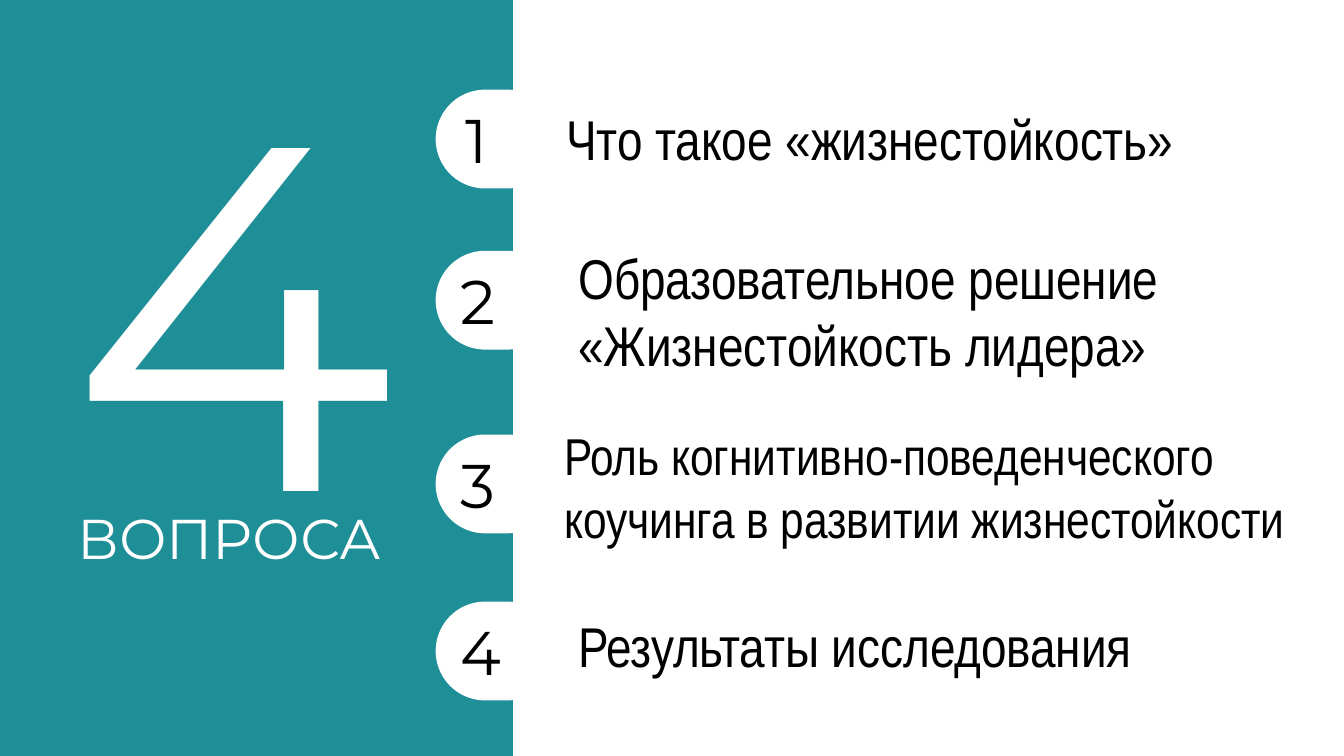
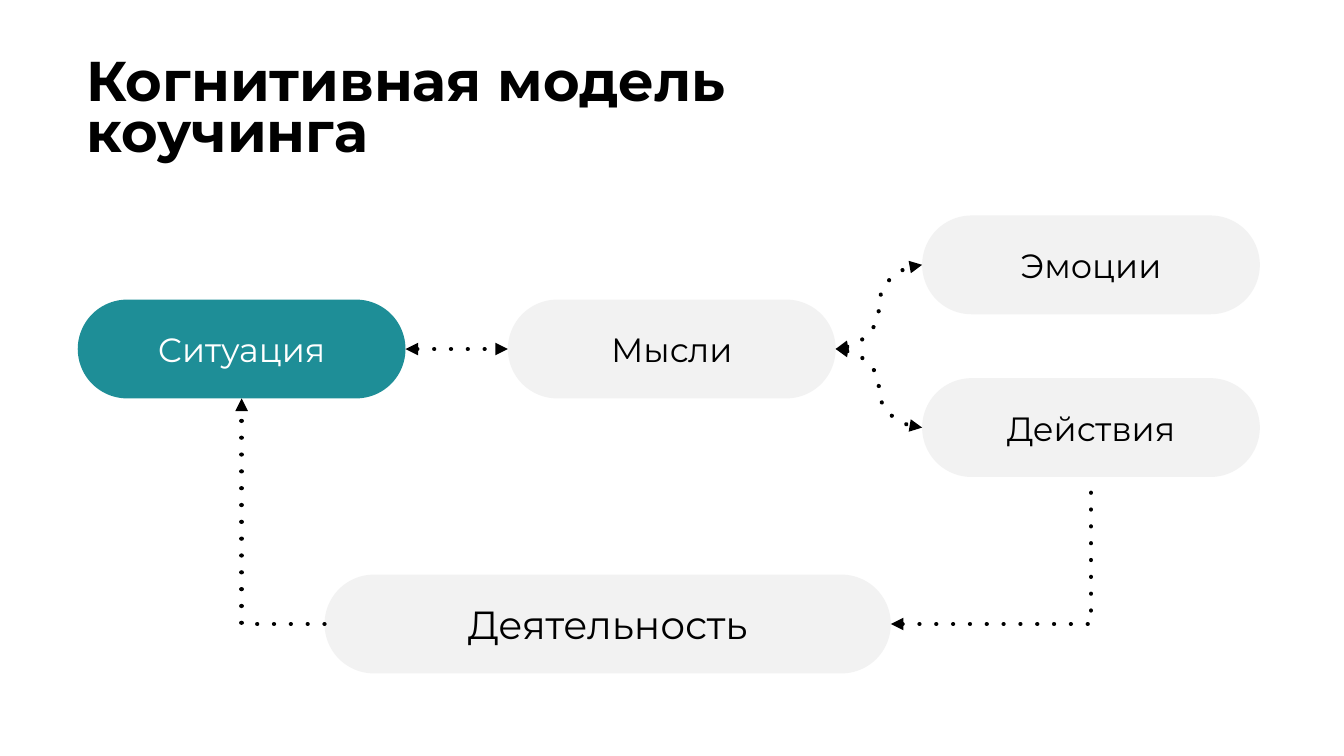
"""Build a two-slide deck: four questions and the cognitive coaching model."""
import dataclasses

import lxml.etree
import pptx
import pptx.dml.color
import pptx.enum.shapes
import pptx.enum.text
import pptx.oxml.ns
import pptx.util

Cm = pptx.util.Cm
Pt = pptx.util.Pt
SHAPES = pptx.enum.shapes.MSO_SHAPE
LINKS = pptx.enum.shapes.MSO_CONNECTOR
ANCHOR = pptx.enum.text.MSO_ANCHOR
ALIGN = pptx.enum.text.PP_ALIGN
TOP, LEFT, BOTTOM, RIGHT = range(4)


@dataclasses.dataclass(frozen=True)
class Theme:
    teal: str = "1E8E97"
    grey: str = "F2F2F2"
    white: str = "FFFFFF"
    black: str = "000000"
    font: str = "Montserrat"
    narrow: str = "Arial Narrow"
    huge: int = 350
    number: int = 44
    title: int = 40
    compact: int = 37
    large: int = 28
    label: int = 24
    pill_height: float = 2.49


THEME = Theme()


def colour(code):
    return pptx.dml.color.RGBColor.from_string(code)


def write(shape, text, *, size, color=THEME.black, font=THEME.font, bold=False,
          align=ALIGN.LEFT, anchor=ANCHOR.MIDDLE, spacing=None, right=0.25):
    frame = shape.text_frame
    frame.word_wrap = True
    frame.vertical_anchor = anchor
    frame.margin_left, frame.margin_right = Cm(0.25), Cm(right)
    frame.margin_top = frame.margin_bottom = Cm(0.13)
    para = frame.paragraphs[0]
    para.alignment = align
    if spacing:
        para.line_spacing = spacing
    span = para.add_run()
    span.text = text
    span.font.name = font
    span.font.size = Pt(size)
    span.font.bold = bold
    span.font.color.rgb = colour(color)


class Painter:
    def __init__(self, deck, theme):
        self.deck = deck
        self.theme = theme
        self.page = None

    def new_page(self):
        self.page = self.deck.slides.add_slide(self.deck.slide_layouts[6])

    def block(self, kind, left, top, width, height, fill):
        shape = self.page.shapes.add_shape(kind, Cm(left), Cm(top), Cm(width), Cm(height))
        shape.shadow.inherit = False
        shape.fill.solid()
        shape.fill.fore_color.rgb = colour(fill)
        shape.line.fill.background()
        return shape

    def text(self, text, left, top, width, height, **style):
        box = self.page.shapes.add_textbox(Cm(left), Cm(top), Cm(width), Cm(height))
        write(box, text, **style)

    def pill(self, text, left, top, width, fill, **style):
        shape = self.block(SHAPES.ROUNDED_RECTANGLE, left, top, width,
                           self.theme.pill_height, fill)
        shape.adjustments[0] = 0.5
        write(shape, text, align=ALIGN.CENTER, **style)
        return shape

    def link(self, kind, start, start_side, end, end_side, arrows, preset=None):
        link = self.page.shapes.add_connector(kind, 0, 0, 0, 0)
        link.begin_connect(start, start_side)
        link.end_connect(end, end_side)
        link.line.color.rgb = colour(self.theme.black)
        link.line.width = Pt(3)
        qn = pptx.oxml.ns.qn
        properties = link.element.spPr
        if preset:
            properties.find(qn("a:prstGeom")).set("prst", preset)
        outline = properties.find(qn("a:ln"))
        outline.set("cap", "rnd")
        lxml.etree.SubElement(outline, qn("a:prstDash"), val="dot")
        lxml.etree.SubElement(outline, qn("a:round"))
        for arrow in arrows:
            lxml.etree.SubElement(outline, qn(f"a:{arrow}"), type="triangle")
        lxml.etree.SubElement(properties, qn("a:effectLst"))


def questions_page(painter):
    theme = painter.theme
    painter.new_page()
    painter.block(SHAPES.RECTANGLE, 0, 0, 12.93, 19.05, theme.teal)
    painter.text("4", 1.52, -0.08, 8.84, 15.21, size=theme.huge,
                 color=theme.white, anchor=ANCHOR.TOP)
    painter.text("ВОПРОСА", 1.7, 12.57, 8.43, 1.96, size=theme.title,
                 color=theme.white, anchor=ANCHOR.TOP)
    questions = [
        ("Что такое «жизнестойкость»", 2.26, 14.02, 2.51, 18.95, 1.96, theme.title),
        ("Образовательное решение «Жизнестойкость лидера»",
         6.32, 14.33, 5.99, 18.95, 3.68, theme.title),
        ("Роль когнитивно-поведенческого коучинга в развитии жизнестойкости",
         10.95, 13.97, 10.54, 19.63, 3.43, theme.compact),
        ("Результаты исследования", 15.16, 14.33, 15.27, 18.95, 1.96, theme.title),
    ]
    for number, (text, pill_top, left, top, width, height, size) in enumerate(questions, 1):
        painter.pill(str(number), 10.98, pill_top, 3.05, theme.white,
                     size=theme.number, right=1.25)
        painter.text(text, left, top, width, height, size=size, font=theme.narrow)


def model_page(painter):
    theme = painter.theme
    painter.new_page()
    painter.text("Когнитивная модель коучинга", 1.93, 1.57, 16.99, 2.51,
                 size=theme.title, bold=True, spacing=0.75)
    situation = painter.pill("Ситуация", 1.96, 7.55, 8.26, theme.teal,
                             size=theme.label, color=theme.white)
    thoughts = painter.pill("Мысли", 12.8, 7.55, 8.26, theme.grey, size=theme.label)
    emotions = painter.pill("Эмоции", 23.24, 5.43, 8.51, theme.grey, size=theme.label)
    actions = painter.pill("Действия", 23.24, 9.53, 8.51, theme.grey, size=theme.label)
    activity = painter.pill("Деятельность", 8.18, 14.48, 14.27, theme.grey, size=theme.large)

    both = ("headEnd", "tailEnd")
    painter.link(LINKS.STRAIGHT, situation, RIGHT, thoughts, LEFT, both)
    for outcome in (emotions, actions):
        painter.link(LINKS.CURVE, thoughts, RIGHT, outcome, LEFT, both)
    for side, target, arrow in ((LEFT, situation, "tailEnd"), (RIGHT, actions, "headEnd")):
        painter.link(LINKS.ELBOW, activity, side, target, BOTTOM, (arrow,), "bentConnector2")


def main():
    deck = pptx.Presentation()
    deck.slide_width, deck.slide_height = Cm(33.87), Cm(19.05)
    painter = Painter(deck, THEME)
    questions_page(painter)
    model_page(painter)
    deck.save("out.pptx")


if __name__ == "__main__":
    main()
